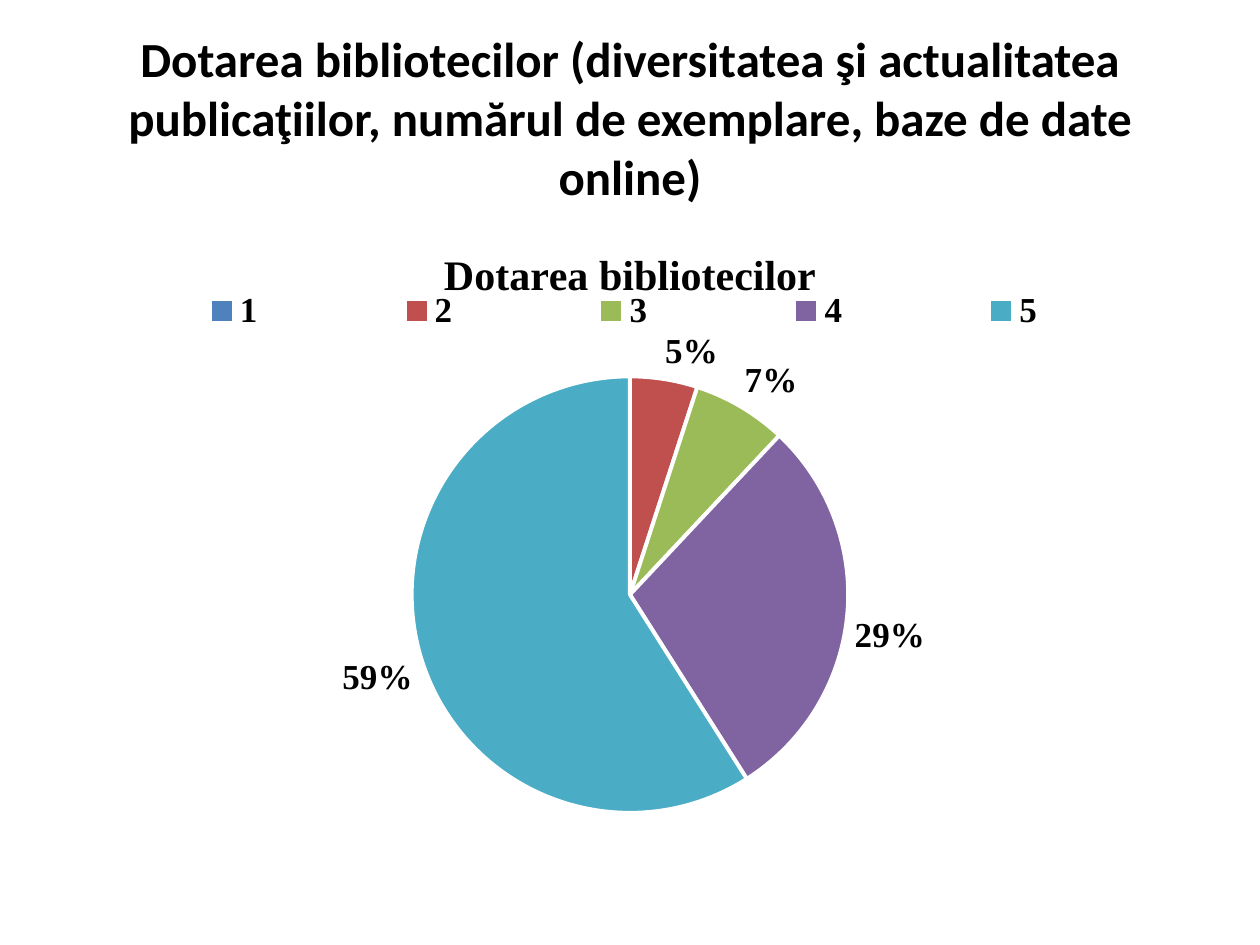
from lxml import etree
from pptx import Presentation
from pptx.chart.data import CategoryChartData
from pptx.dml.color import RGBColor
from pptx.enum.chart import XL_CHART_TYPE, XL_LABEL_POSITION, XL_LEGEND_POSITION
from pptx.enum.text import MSO_ANCHOR, PP_ALIGN
from pptx.oxml.ns import qn
from pptx.util import Pt

PIE = XL_CHART_TYPE.PIE
OUTSIDE_END = XL_LABEL_POSITION.OUTSIDE_END
LEGEND_TOP = XL_LEGEND_POSITION.TOP
MIDDLE = MSO_ANCHOR.MIDDLE
CENTER = PP_ALIGN.CENTER

HEADING = ("Dotarea bibliotecilor (diversitatea şi actualitatea publicaţiilor, "
           "numărul de exemplare, baze de date online)")
CHART_TITLE = "Dotarea bibliotecilor"
RATINGS = [  # rating, percent, colour
    ("1", 0, "4F81BD"),
    ("2", 5, "C0504D"),
    ("3", 7, "9BBB59"),
    ("4", 29, "8064A2"),
    ("5", 59, "4BACC6"),
]
MARGIN, CONTENT_WIDTH = 36, 648
LEGEND_AREA = {"x": 0.01, "y": 0.11, "w": 0.97, "h": 0.07}
PIE_AREA = {"x": 0.03, "y": 0.25, "w": 0.94, "h": 0.7}


def rgb(color):
    return RGBColor.from_string(color)


def style_font(font, name, size):
    font.name, font.size, font.bold = name, Pt(size), True
    font.color.rgb = rgb("000000")


def place(element, area, before, inner=False):
    """Give a chart part a manual layout in fractions of the chart."""
    for old in element.findall(qn("c:layout")):
        element.remove(old)
    layout = etree.Element(qn("c:layout"))
    manual = etree.SubElement(layout, qn("c:manualLayout"))
    settings = {"layoutTarget": "inner"} if inner else {}
    settings.update(xMode="edge", yMode="edge", **area)
    for tag, value in settings.items():
        etree.SubElement(manual, qn(f"c:{tag}")).set("val", str(value))
    element.find(qn(before)).addprevious(layout)


def add_heading(slide):
    heading = slide.shapes.add_textbox(Pt(MARGIN), Pt(21.6), Pt(CONTENT_WIDTH), Pt(90))
    frame = heading.text_frame
    frame.word_wrap = True
    frame.vertical_anchor = MIDDLE
    paragraph = frame.paragraphs[0]
    paragraph.text = HEADING
    paragraph.alignment = CENTER
    style_font(paragraph.font, "Calibri", 28)


def add_ratings_pie(slide):
    data = CategoryChartData()
    data.categories = [rating for rating, _, _ in RATINGS]
    data.add_series(CHART_TITLE, [percent for _, percent, _ in RATINGS])
    chart = slide.shapes.add_chart(
        PIE, Pt(MARGIN), Pt(126), Pt(CONTENT_WIDTH), Pt(356.4), data).chart
    style_font(chart.font, "Times New Roman", 20)

    chart.has_title = True
    title = chart.chart_title.text_frame.paragraphs[0]
    title.text = CHART_TITLE
    style_font(title.font, "Times New Roman", 24)

    chart.has_legend = True
    legend = chart.legend
    legend.position = LEGEND_TOP
    legend.include_in_layout = False
    style_font(legend.font, "Times New Roman", 20)

    plot = chart.plots[0]
    plot.vary_by_categories = True
    series = plot.series[0]
    for index, (_, _, color) in enumerate(RATINGS):
        wedge = series.points[index].format
        wedge.fill.solid()
        wedge.fill.fore_color.rgb = rgb(color)
        wedge.line.color.rgb = rgb("FFFFFF")
        wedge.line.width = Pt(2.25)

    labels = series.data_labels
    labels.show_percentage = True
    labels.show_value = False
    labels.number_format, labels.number_format_is_linked = "0%", False
    labels.position = OUTSIDE_END
    style_font(labels.font, "Times New Roman", 20)

    plot_area = chart.element.find(".//" + qn("c:plotArea"))
    place(plot_area, PIE_AREA, "c:pieChart", inner=True)
    place(chart.element.find(".//" + qn("c:legend")), LEGEND_AREA, "c:overlay")


def main():
    deck = Presentation()
    deck.slide_width, deck.slide_height = Pt(720), Pt(540)
    slide = deck.slides.add_slide(deck.slide_layouts[6])
    add_heading(slide)
    add_ratings_pie(slide)
    deck.save("out.pptx")


if __name__ == "__main__":
    main()
